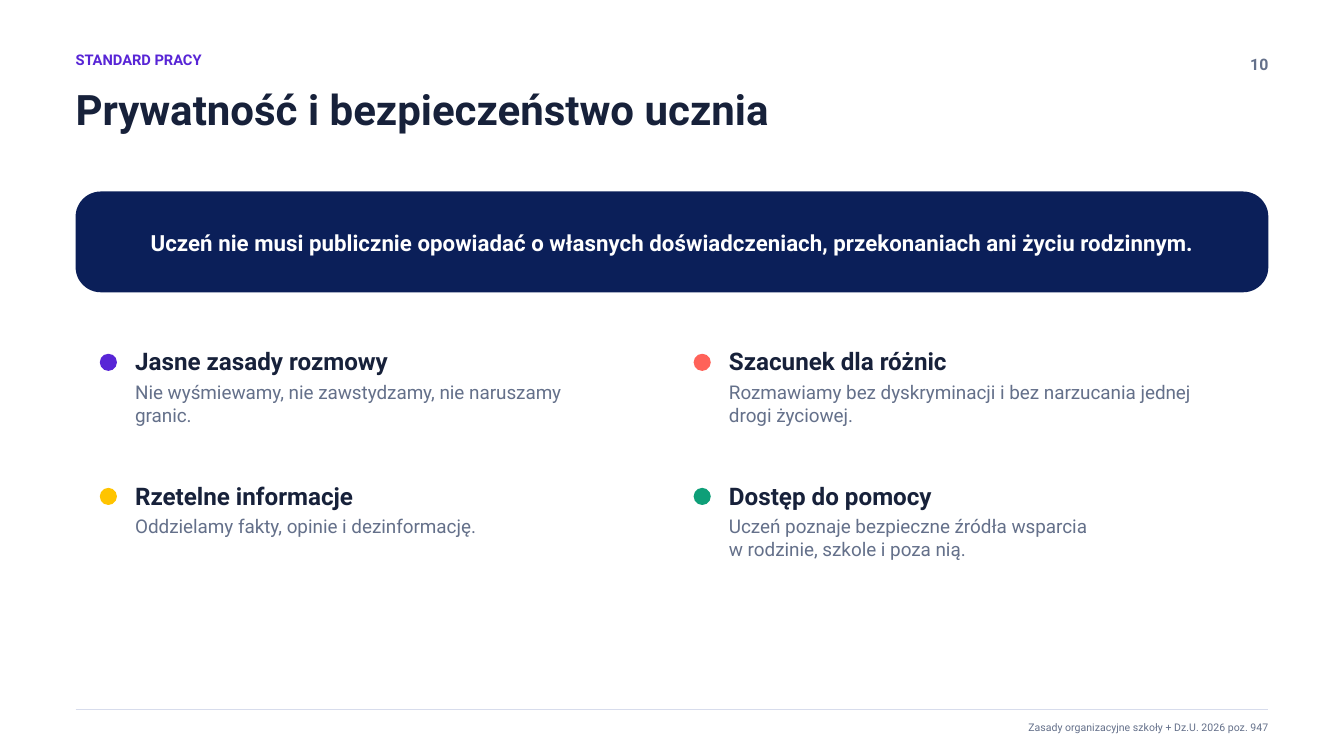
from pptx import Presentation
from pptx.dml.color import RGBColor
from pptx.enum.shapes import MSO_CONNECTOR, MSO_SHAPE
from pptx.enum.text import MSO_ANCHOR, PP_ALIGN
from pptx.oxml.ns import qn
from pptx.util import Inches, Pt
from lxml.etree import SubElement

FONT = "Roboto"
WHITE = RGBColor(0xFF, 0xFF, 0xFF)
NAVY = RGBColor(0x0B, 0x1F, 0x59)
INK = RGBColor(0x17, 0x21, 0x3A)
GREY = RGBColor(0x64, 0x70, 0x8A)
RULE = RGBColor(0xD7, 0xDC, 0xEC)
VIOLET = RGBColor(0x58, 0x25, 0xD6)
YELLOW = RGBColor(0xFF, 0xC4, 0x00)
CORAL = RGBColor(0xFF, 0x62, 0x59)
GREEN = RGBColor(0x0E, 0x9F, 0x78)

LEFT, WIDTH = 0.75, 11.83
ROWS = (3.44, 4.77)
# Each column: left edge, text width, points from top to bottom
COLUMNS = (
    (0.99, 4.48, (
        (VIOLET, "Jasne zasady rozmowy",
         "Nie wyśmiewamy, nie zawstydzamy, nie naruszamy granic."),
        (YELLOW, "Rzetelne informacje",
         "Oddzielamy fakty, opinie i dezinformację."),
    )),
    (6.88, 4.69, (
        (CORAL, "Szacunek dla różnic",
         "Rozmawiamy bez dyskryminacji i bez narzucania jednej drogi życiowej."),
        (GREEN, "Dostęp do pomocy",
         "Uczeń poznaje bezpieczne źródła wsparcia\nw rodzinie, szkole i poza nią."),
    )),
)


def add_text(slide, text, x, y, w, h, size, color=GREY, bold=False,
             align=PP_ALIGN.LEFT, anchor=MSO_ANCHOR.TOP, spacing=None):
    """Place text without margins; each line becomes a paragraph."""
    box = slide.shapes.add_textbox(Inches(x), Inches(y), Inches(w), Inches(h))
    frame = box.text_frame
    frame.word_wrap = True
    frame.vertical_anchor = anchor
    frame.margin_left = frame.margin_right = 0
    frame.margin_top = frame.margin_bottom = 0
    frame.text = text
    for para in frame.paragraphs:
        para.alignment = align
        para.line_spacing = spacing
        for run in para.runs:
            font = run.font
            font.name, font.size, font.bold = FONT, Pt(size), bold
            font.color.rgb = color


def add_solid(slide, kind, x, y, w, h, color):
    shape = slide.shapes.add_shape(
        kind, Inches(x), Inches(y), Inches(w), Inches(h))
    shape.shadow.inherit = False
    shape.fill.solid()
    shape.fill.fore_color.rgb = color
    shape.line.fill.background()
    return shape


def add_header(slide, x, y, w):
    add_text(slide, "STANDARD PRACY", x, y, 7.29, 0.25, 10.5,
             color=VIOLET, bold=True)
    add_text(slide, "Prywatność i bezpieczeństwo ucznia",
             x, y + 0.33, 10.83, 0.81, 30, color=INK, bold=True)
    add_text(slide, "10", x + w - 0.5, y + 0.04, 0.5, 0.27, 11.3,
             bold=True, align=PP_ALIGN.RIGHT)


def add_banner(slide, x, y, w, h):
    panel = add_solid(slide, MSO_SHAPE.ROUNDED_RECTANGLE, x, y, w, h, NAVY)
    panel.adjustments[0] = 0.25
    add_text(slide, "Uczeń nie musi publicznie opowiadać o własnych "
             "doświadczeniach, przekonaniach ani życiu rodzinnym.",
             x + 0.38, y + 0.27, w - 0.75, 0.5, 15.9, color=WHITE, bold=True,
             align=PP_ALIGN.CENTER, anchor=MSO_ANCHOR.MIDDLE, spacing=0.9)


def add_point(slide, x, y, w, color, title, detail):
    """Place a dot with a heading and a description beside it."""
    add_solid(slide, MSO_SHAPE.OVAL, x, y + 0.07, 0.17, 0.17, color)
    add_text(slide, title, x + 0.35, y, w, 0.31, 17.3, color=INK, bold=True)
    add_text(slide, detail, x + 0.35, y + 0.34, w, 0.48, 13.5)


def add_footer(slide, x, y, w):
    line = slide.shapes.add_connector(
        MSO_CONNECTOR.STRAIGHT, Inches(x), Inches(y), Inches(x + w), Inches(y))
    line.line.color.rgb = RULE
    line.line.width = Pt(0.75)
    SubElement(line._element.spPr, qn("a:effectLst"))
    add_text(slide, "Zasady organizacyjne szkoły + Dz.U. 2026 poz. 947",
             x + w - 7.27, y + 0.11, 7.27, 0.19, 7.5, align=PP_ALIGN.RIGHT)


def main():
    deck = Presentation()
    deck.slide_width, deck.slide_height = Inches(13.33), Inches(7.5)
    slide = deck.slides.add_slide(deck.slide_layouts[6])
    slide.background.fill.solid()
    slide.background.fill.fore_color.rgb = WHITE

    add_header(slide, LEFT, 0.5, WIDTH)
    add_banner(slide, LEFT, 1.9, WIDTH, 1)
    for x, width, points in COLUMNS:
        for y, point in zip(ROWS, points):
            add_point(slide, x, y, width, *point)
    add_footer(slide, LEFT, 7.04, WIDTH)
    deck.save("out.pptx")


if __name__ == "__main__":
    main()
